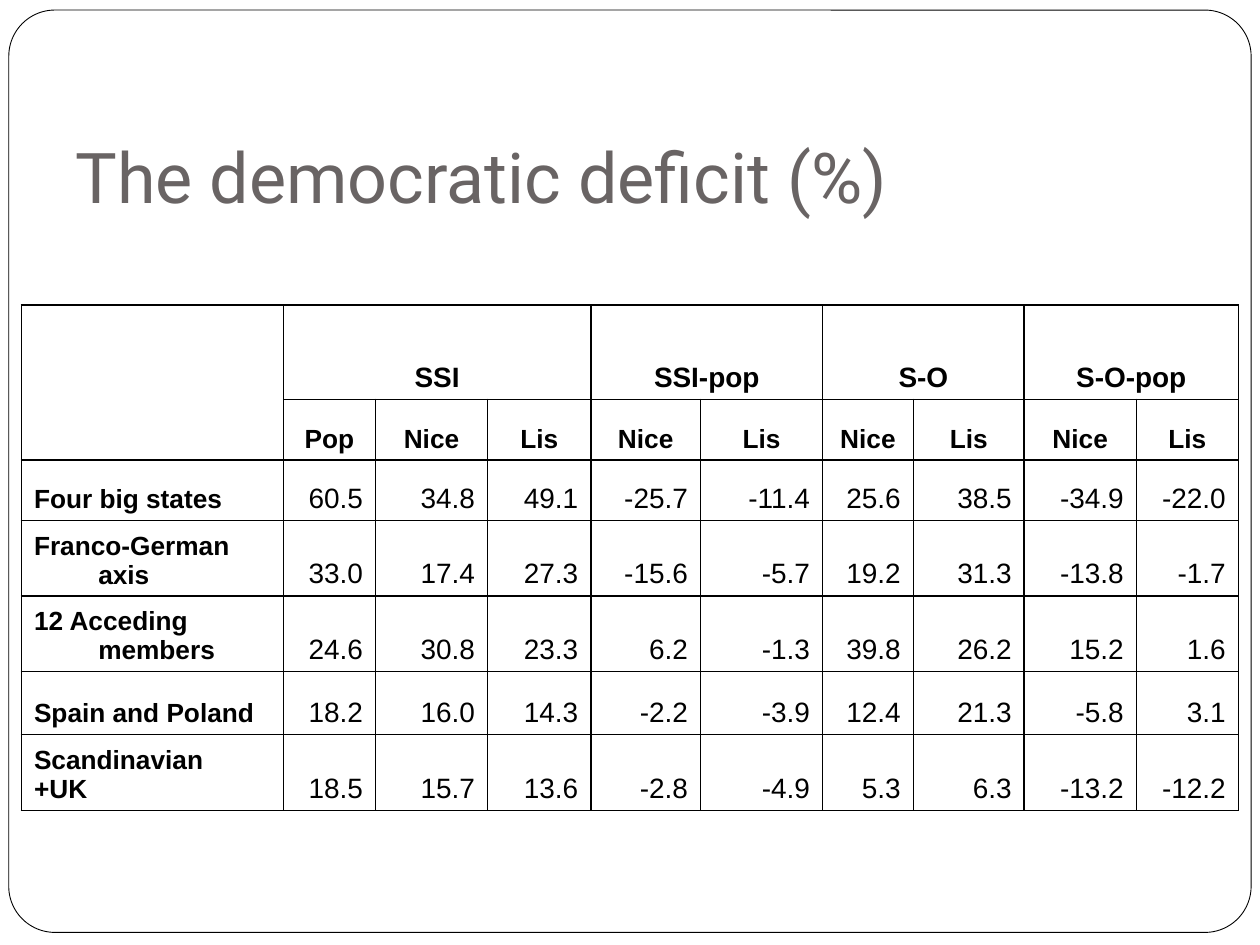
from lxml import etree
from pptx import Presentation
from pptx.dml.color import RGBColor
from pptx.enum.shapes import MSO_SHAPE
from pptx.enum.text import MSO_ANCHOR, PP_ALIGN
from pptx.oxml.ns import qn
from pptx.util import Inches, Pt

BLACK = RGBColor(0x00, 0x00, 0x00)
WHITE = RGBColor(0xFF, 0xFF, 0xFF)
TITLE_GRAY = RGBColor(0x69, 0x64, 0x64)

ROUNDED_RECTANGLE = MSO_SHAPE.ROUNDED_RECTANGLE
BOTTOM = MSO_ANCHOR.BOTTOM
LEFT, CENTER, RIGHT = PP_ALIGN.LEFT, PP_ALIGN.CENTER, PP_ALIGN.RIGHT

BODY_SIZE, LABEL_SIZE = 16, 15
HANGING_INDENT = Inches(0.51)
COLUMN_WIDTHS = [2.08, 0.73, 0.89, 0.82, 0.87, 0.97, 0.72, 0.88, 0.89, 0.81]
ROW_HEIGHTS = [0.75, 0.48, 0.48, 0.5, 0.5, 0.5, 0.5]
GROUPS = [("SSI", 1, 3), ("SSI-pop", 4, 5), ("S-O", 6, 7), ("S-O-pop", 8, 9)]
SUBHEADINGS = ["Pop", "Nice", "Lis", "Nice", "Lis", "Nice", "Lis", "Nice", "Lis"]
COUNTRY_ROWS = [
    (["Four big states"],
     ["60.5", "34.8", "49.1", "-25.7", "-11.4", "25.6", "38.5", "-34.9", "-22.0"]),
    (["Franco-German axis"],
     ["33.0", "17.4", "27.3", "-15.6", "-5.7", "19.2", "31.3", "-13.8", "-1.7"]),
    (["12 Acceding members"],
     ["24.6", "30.8", "23.3", "6.2", "-1.3", "39.8", "26.2", "15.2", "1.6"]),
    (["Spain and Poland"],
     ["18.2", "16.0", "14.3", "-2.2", "-3.9", "12.4", "21.3", "-5.8", "3.1"]),
    (["Scandinavian", "+UK"],
     ["18.5", "15.7", "13.6", "-2.8", "-4.9", "5.3", "6.3", "-13.2", "-12.2"]),
]


def add_run(paragraph, text, font_name, size, color, bold=False):
    run = paragraph.add_run()
    run.text = text
    run.font.name = font_name
    run.font.size = Pt(size)
    run.font.bold = bold
    run.font.color.rgb = color


def add_frame(slide):
    shape = slide.shapes.add_shape(
        ROUNDED_RECTANGLE, Inches(0.07), Inches(0.08), Inches(9.86), Inches(7.32))
    shape.adjustments[0] = 0.05
    shape.shadow.inherit = False
    shape.fill.solid()
    shape.fill.fore_color.rgb = WHITE
    shape.line.color.rgb = BLACK
    shape.line.width = Pt(0.5)


def add_title(slide, text):
    shape = slide.shapes.add_textbox(Inches(0.5), Inches(0.58), Inches(9), Inches(1.25))
    frame = shape.text_frame
    frame.word_wrap = True
    frame.vertical_anchor = BOTTOM
    frame.margin_bottom = Inches(0.1)
    add_run(frame.paragraphs[0], text, "Roboto", 40, TITLE_GRAY)


def style_cell(cell):
    properties = cell._tc.get_or_add_tcPr()
    for side in ("a:lnL", "a:lnR", "a:lnT", "a:lnB"):
        line = etree.SubElement(properties, qn(side), w=str(Pt(1)))
        fill = etree.SubElement(line, qn("a:solidFill"))
        etree.SubElement(fill, qn("a:srgbClr"), val=str(BLACK))
    cell.fill.background()
    cell.vertical_anchor = BOTTOM


def write_cell(cell, lines, alignment, size, bold):
    frame = cell.text_frame
    for index, text in enumerate(lines):
        paragraph = frame.add_paragraph() if index else frame.paragraphs[0]
        paragraph.alignment = alignment
        properties = paragraph._p.get_or_add_pPr()
        properties.set("marL", str(HANGING_INDENT))
        properties.set("indent", str(-HANGING_INDENT))
        add_run(paragraph, text, "Arial", size, BLACK, bold)


def add_deficit_table(slide):
    table = slide.shapes.add_table(
        len(ROW_HEIGHTS), len(COLUMN_WIDTHS), Inches(0.17), Inches(2.42),
        Inches(sum(COLUMN_WIDTHS)), Inches(sum(ROW_HEIGHTS))).table
    table.first_row = False
    table.horz_banding = False
    for column, width in zip(table.columns, COLUMN_WIDTHS):
        column.width = Inches(width)
    for row, height in zip(table.rows, ROW_HEIGHTS):
        row.height = Inches(height)
    for cell in table.iter_cells():
        style_cell(cell)

    table.cell(0, 0).merge(table.cell(1, 0))
    for heading, first, last in GROUPS:
        table.cell(0, first).merge(table.cell(0, last))
        write_cell(table.cell(0, first), [heading], CENTER, BODY_SIZE, True)
    for column, heading in enumerate(SUBHEADINGS, 1):
        write_cell(table.cell(1, column), [heading], CENTER, LABEL_SIZE, True)
    for row, (label, values) in enumerate(COUNTRY_ROWS, 2):
        write_cell(table.cell(row, 0), label, LEFT, LABEL_SIZE, True)
        for column, value in enumerate(values, 1):
            write_cell(table.cell(row, column), [value], RIGHT, BODY_SIZE, False)


def main():
    presentation = Presentation()
    presentation.slide_width = Inches(10)
    presentation.slide_height = Inches(7.5)
    slide = presentation.slides.add_slide(presentation.slide_layouts[6])
    add_frame(slide)
    add_title(slide, "The democratic deficit (%)")
    add_deficit_table(slide)
    presentation.save("out.pptx")


if __name__ == "__main__":
    main()
